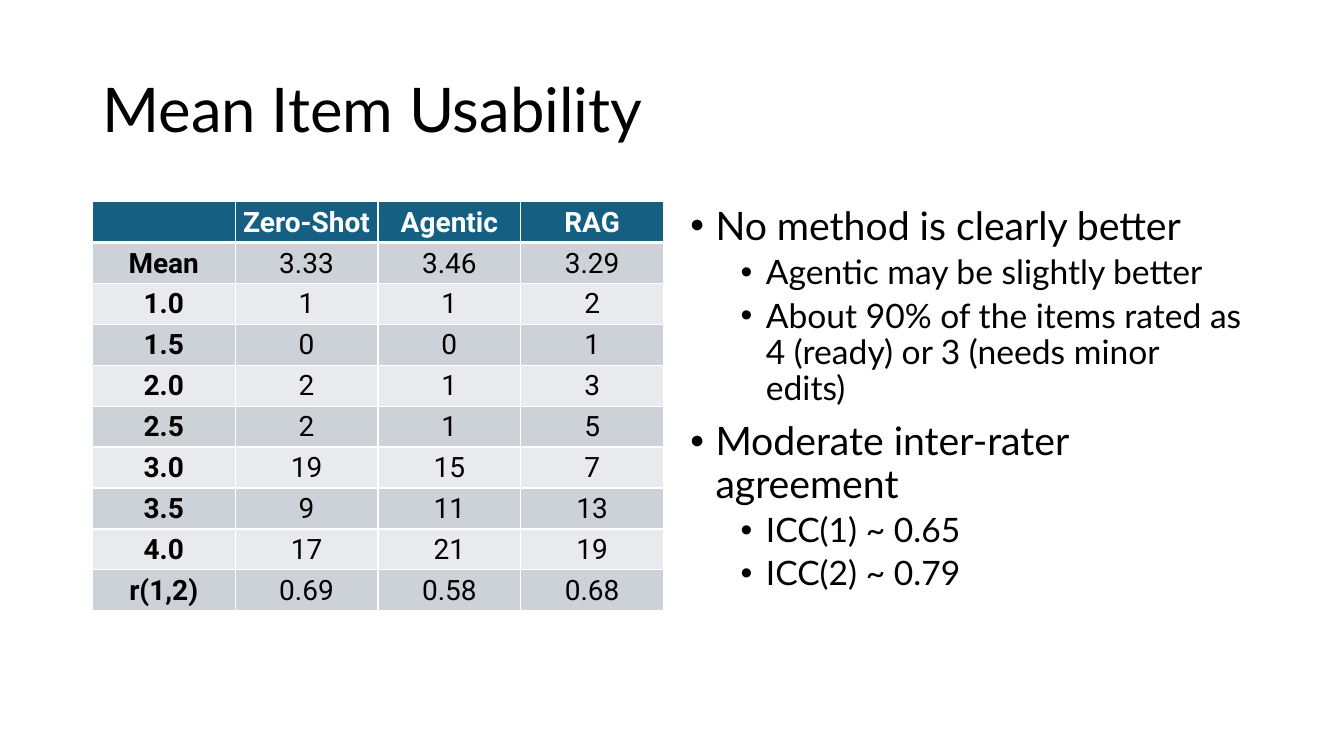
import pptx
import pptx.util
import pptx.dml.color
import pptx.enum.text
import pptx.oxml.ns
import lxml.etree

PX = 9525
WHITE = pptx.dml.color.RGBColor(0xFF, 0xFF, 0xFF)
BLACK = pptx.dml.color.RGBColor(0, 0, 0)
HEADER_BLUE = pptx.dml.color.RGBColor(0x15, 0x60, 0x82)
BAND_DARK = pptx.dml.color.RGBColor(0xCC, 0xD2, 0xD8)
BAND_LIGHT = pptx.dml.color.RGBColor(0xE8, 0xEA, 0xED)
CENTER = pptx.enum.text.PP_ALIGN.CENTER
MIDDLE = pptx.enum.text.MSO_ANCHOR.MIDDLE

USABILITY = [
    ["", "Zero-Shot", "Agentic", "RAG"],
    ["Mean", "3.33", "3.46", "3.29"],
    ["1.0", "1", "1", "2"],
    ["1.5", "0", "0", "1"],
    ["2.0", "2", "1", "3"],
    ["2.5", "2", "1", "5"],
    ["3.0", "19", "15", "7"],
    ["3.5", "9", "11", "13"],
    ["4.0", "17", "21", "19"],
    ["r(1,2)", "0.69", "0.58", "0.68"],
]
FINDINGS = [
    (0, "No method is clearly better"),
    (1, "Agentic may be slightly better"),
    (1, "About 90% of the items rated as 4 (ready) or 3 (needs minor edits)"),
    (0, "Moderate inter-rater agreement"),
    (1, "ICC(1) ~ 0.65"),
    (1, "ICC(2) ~ 0.79"),
]


def emu(*lengths):
    """Turn px lengths into EMU."""
    return [pptx.util.Emu(length * PX) for length in lengths]


def write(para, text, size, font="Lato", color=BLACK, bold=False, align=None, spacing=None, before=None):
    """Put formatted text into a paragraph."""
    span = para.add_run()
    span.text = text
    span.font.size = pptx.util.Pt(size)
    span.font.name = font
    span.font.color.rgb = color
    span.font.bold = bold
    para.alignment = align
    para.line_spacing = spacing
    if before is not None:
        para.space_before = pptx.util.Pt(before)


def add_bullet(para, indent, hanging):
    """Give a paragraph a round bullet with a hanging indent."""
    props = para._p.get_or_add_pPr()
    left, first = emu(indent, -hanging)
    props.set("marL", str(left))
    props.set("indent", str(first))
    font = lxml.etree.SubElement(props, pptx.oxml.ns.qn("a:buFont"))
    font.set("typeface", "Arial")
    bullet = lxml.etree.SubElement(props, pptx.oxml.ns.qn("a:buChar"))
    bullet.set("char", "•")


def add_borders(cell, bottom):
    """Draw white borders round a cell, with its own bottom width."""
    props = cell._tc.get_or_add_tcPr()
    for place, (side, width) in enumerate({"L": 1, "R": 1, "T": 1, "B": bottom}.items()):
        line = lxml.etree.Element(pptx.oxml.ns.qn(f"a:ln{side}"), w=str(pptx.util.Pt(width)))
        fill = lxml.etree.SubElement(line, pptx.oxml.ns.qn("a:solidFill"))
        lxml.etree.SubElement(fill, pptx.oxml.ns.qn("a:srgbClr"), val=str(WHITE))
        props.insert(place, line)


def add_title(page, box, text):
    """Place the slide title, centred vertically in its box."""
    frame = page.shapes.add_textbox(*emu(*box)).text_frame
    frame.word_wrap = True
    frame.vertical_anchor = MIDDLE
    write(frame.paragraphs[0], text, 44, spacing=0.9)


def add_usability_table(page, box, rows):
    """Place the banded table of ratings by method."""
    table = page.shapes.add_table(len(rows), len(rows[0]), *emu(*box)).table
    for r, row in enumerate(rows):
        header = r == 0
        band = BAND_DARK if r % 2 else BAND_LIGHT
        for c, text in enumerate(row):
            cell = table.cell(r, c)
            cell.fill.solid()
            cell.fill.fore_color.rgb = HEADER_BLUE if header else band
            cell.vertical_anchor = MIDDLE
            cell.margin_left = cell.margin_right = cell.margin_top = emu(1)[0]
            cell.margin_bottom = 0
            add_borders(cell, bottom=3 if header else 1)
            if text:
                write(cell.text_frame.paragraphs[0], text, 20, font="Roboto",
                      color=WHITE if header else BLACK, bold=header or c == 0, align=CENTER)


def add_findings(page, box, findings):
    """Place the two-level bullet list."""
    frame = page.shapes.add_textbox(*emu(*box)).text_frame
    frame.word_wrap = True
    for number, (level, text) in enumerate(findings):
        para = frame.add_paragraph() if number else frame.paragraphs[0]
        para.level = level
        write(para, text, 24 if level else 28, spacing=0.9, before=5 if level else 10)
        add_bullet(para, indent=24 + 48 * level, hanging=24)


def main():
    """Build the deck and save it."""
    deck = pptx.Presentation()
    deck.slide_width, deck.slide_height = emu(1280, 720)
    page = deck.slides.add_slide(deck.slide_layouts[6])
    add_title(page, (88, 38, 1104, 139), "Mean Item Usability")
    add_usability_table(page, (88, 192, 544, 390), USABILITY)
    add_findings(page, (648, 192, 544, 457), FINDINGS)
    deck.save("out.pptx")


if __name__ == "__main__":
    main()
